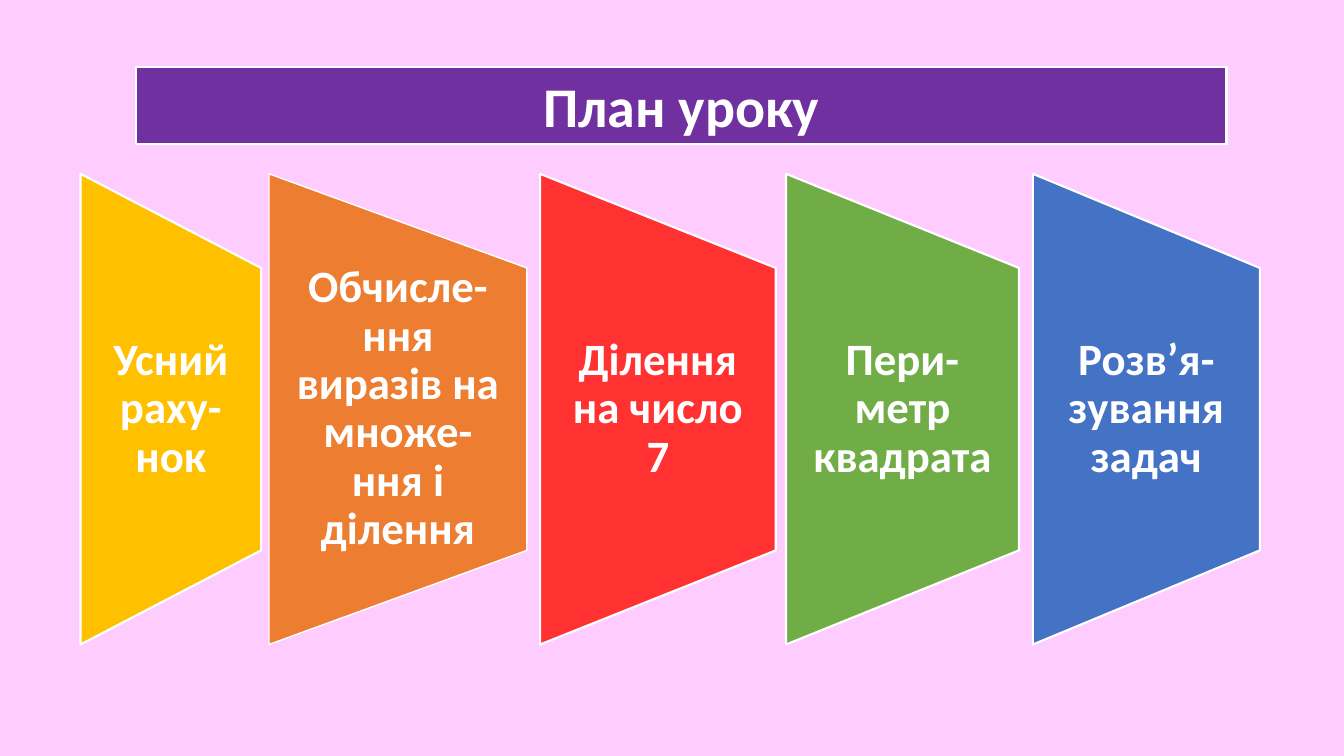
import pptx
import pptx.dml.color
import pptx.enum.shapes
import pptx.enum.text
import pptx.util

Cm = pptx.util.Cm
Pt = pptx.util.Pt
MSO_SHAPE = pptx.enum.shapes.MSO_SHAPE
ANCHOR = pptx.enum.text.MSO_ANCHOR

COLORS = {
    "background": "FFCCFF",
    "title": "7030A0",
    "white": "FFFFFF",
    "yellow": "FFC000",
    "orange": "ED7D31",
    "red": "FF3131",
    "green": "70AD47",
    "blue": "4472C4",
}

# Lesson steps: left and width in cm, colour, outline in points, wording
STEPS = [
    (2.03, 4.55, "yellow", 1.5, "Усний раху-нок"),
    (6.78, 6.5, "orange", 1, "Обчисле-ння виразів на множе-ння і ділення"),
    (13.61, 5.94, "red", 1.5, "Ділення на число 7"),
    (19.81, 5.87, "green", 1.5, "Пери-метр квадрата"),
    (26.03, 5.72, "blue", 1.5, "Розв’я-зування задач"),
]
STEP_HEIGHT = 11.86
LABEL_HEIGHT = 7.11
STEPS_MIDDLE = 10.31


def rgb(name):
    return pptx.dml.color.RGBColor.from_string(COLORS[name])


def add_panel(slide, kind, left, top, width, height, color, outline):
    panel = slide.shapes.add_shape(kind, Cm(left), Cm(top), Cm(width), Cm(height))
    panel.shadow.inherit = False
    panel.fill.solid()
    panel.fill.fore_color.rgb = rgb(color)
    panel.line.color.rgb = rgb("white")
    panel.line.width = Pt(outline)
    return panel


def write_centred(frame, wording, size):
    frame.word_wrap = True
    frame.vertical_anchor = ANCHOR.MIDDLE
    paragraph = frame.paragraphs[0]
    paragraph.alignment = pptx.enum.text.PP_ALIGN.CENTER
    run = paragraph.add_run()
    run.text = wording
    run.font.name = "Calibri"
    run.font.size = Pt(size)
    run.font.bold = True
    run.font.color.rgb = rgb("white")
    return paragraph


def add_step(slide, left, width, color, outline, wording):
    # Trapezoid turned on its side, so its length becomes the step height
    trapezoid = add_panel(
        slide, MSO_SHAPE.FLOWCHART_MANUAL_OPERATION,
        left + (width - STEP_HEIGHT) / 2, STEPS_MIDDLE - width / 2,
        STEP_HEIGHT, width, color, outline)
    trapezoid.rotation = 270

    # Upright label over the trapezoid
    label = slide.shapes.add_textbox(
        Cm(left), Cm(STEPS_MIDDLE - LABEL_HEIGHT / 2), Cm(width), Cm(LABEL_HEIGHT))
    frame = label.text_frame
    frame.margin_left = frame.margin_right = Cm(0.56)
    frame.margin_top = frame.margin_bottom = 0
    write_centred(frame, wording, 32).line_spacing = 0.9


def main():
    deck = pptx.Presentation()
    deck.slide_width, deck.slide_height = Cm(33.87), Cm(19.05)
    slide = deck.slides.add_slide(deck.slide_layouts[6])
    slide.background.fill.solid()
    slide.background.fill.fore_color.rgb = rgb("background")

    # Title bar
    title = add_panel(slide, MSO_SHAPE.RECTANGLE, 3.43, 1.68, 27.48, 1.96, "title", 1.5)
    write_centred(title.text_frame, "План уроку", 40)

    # Lesson steps
    for step in STEPS:
        add_step(slide, *step)

    deck.save("out.pptx")


if __name__ == "__main__":
    main()
